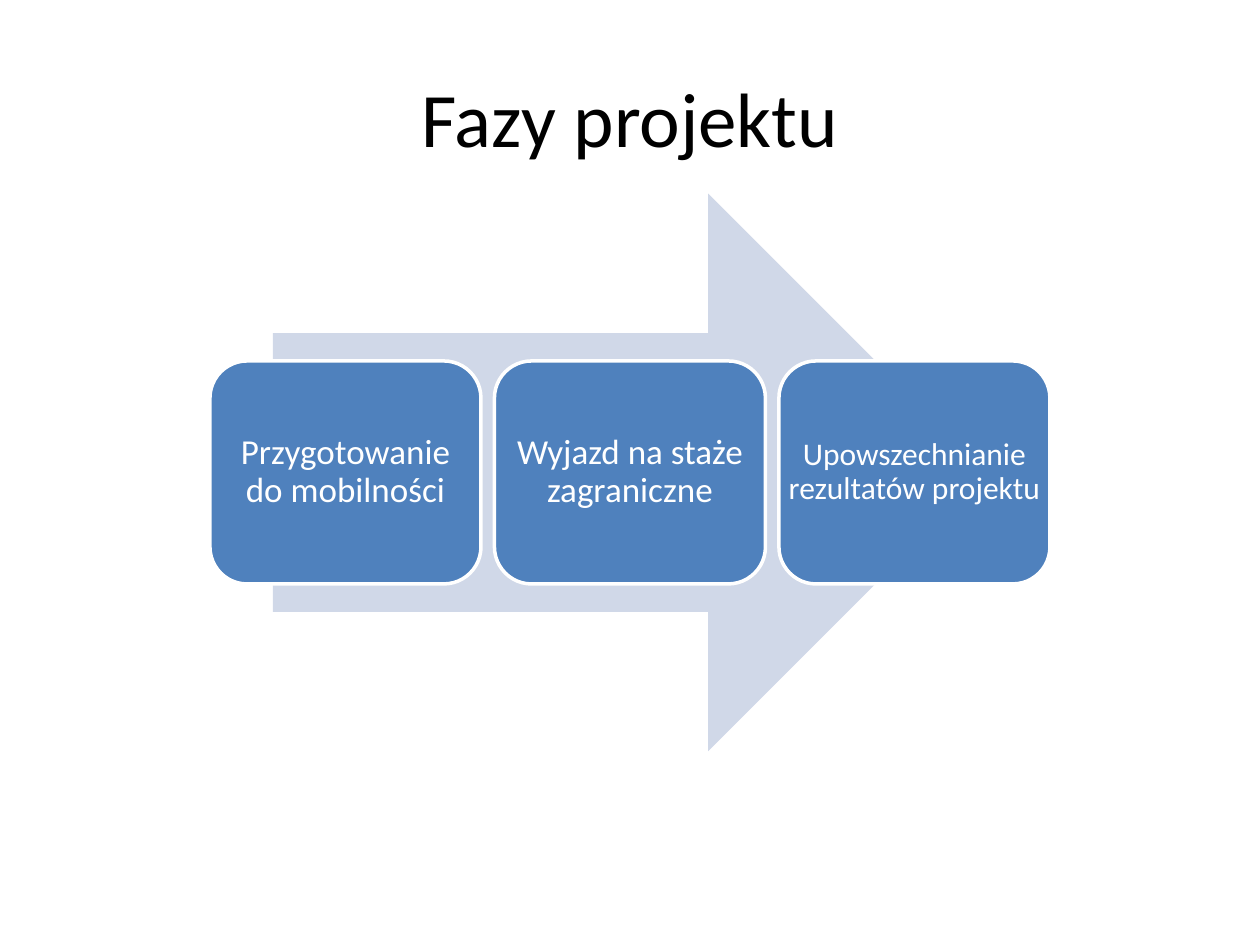
from pptx import Presentation
from pptx import util as u
from pptx.dml.color import RGBColor
from pptx.enum import shapes, text

COLORS = {"title": "000000", "arrow": "D0D8E8", "card": "4F81BD", "white": "FFFFFF"}
WIDTH, HEIGHT = u.Inches(10), u.Inches(7.5)
PHASES = [
    ("Przygotowanie do mobilności", 20, 0.08),
    ("Wyjazd na staże zagraniczne", 20, 0.08),
    ("Upowszechnianie rezultatów projektu", 18, 0.07),
]


def color(name):
    """Return the named palette colour."""
    return RGBColor.from_string(COLORS[name])


def add_label(page, box, words, size, shade, inset=0.1, spacing=1.0):
    """Place centred, wrapping text in a box."""
    frame = page.shapes.add_textbox(*box).text_frame
    frame.word_wrap = True
    frame.vertical_anchor = text.MSO_ANCHOR.MIDDLE
    frame.margin_left = frame.margin_right = u.Inches(inset)
    frame.margin_top = frame.margin_bottom = u.Inches(inset)
    frame.text = words
    para = frame.paragraphs[0]
    para.alignment = text.PP_ALIGN.CENTER
    para.line_spacing = spacing
    font = para.runs[0].font
    font.name, font.size = "Calibri", u.Pt(size)
    font.color.rgb = color(shade)


def add_block(page, kind, box, fill):
    """Place a filled preset shape without outline or shadow."""
    block = page.shapes.add_shape(kind, *box)
    block.shadow.inherit = False
    block.fill.solid()
    block.fill.fore_color.rgb = color(fill)
    block.line.fill.background()
    return block


def add_process(page, box):
    """Place the arrow and a row of phase cards inside a box."""
    left, top, width, height = box
    arrow_width = int(width * 0.85)
    arrow_box = (left + (width - arrow_width) // 2, top, arrow_width, height)
    add_block(page, shapes.MSO_SHAPE.RIGHT_ARROW, arrow_box, "arrow")

    gap = int(width * 0.016)
    card_width = (width - gap * (len(PHASES) - 1)) // len(PHASES)
    card_height = int(height * 0.4)
    card_top = top + (height - card_height) // 2
    for column, (words, size, inset) in enumerate(PHASES):
        card_box = (left + column * (card_width + gap), card_top, card_width, card_height)
        card = add_block(page, shapes.MSO_SHAPE.ROUNDED_RECTANGLE, card_box, "card")
        card.line.color.rgb = color("white")
        card.line.width = u.Pt(2)
        add_label(page, card_box, words, size, "white", inset, 0.9)


def main():
    """Build and save the project phases slide."""
    deck = Presentation()
    deck.slide_width, deck.slide_height = WIDTH, HEIGHT
    page = deck.slides.add_slide(deck.slide_layouts[6])
    title_box = (int(WIDTH * 0.05), int(HEIGHT * 0.04), int(WIDTH * 0.9), HEIGHT // 6)
    add_label(page, title_box, "Fazy projektu", 44, "title")
    process_width, process_height = WIDTH * 2 // 3, int(HEIGHT * 0.59)
    process_box = ((WIDTH - process_width) // 2, (HEIGHT - process_height) // 2,
                   process_width, process_height)
    add_process(page, process_box)
    deck.save("out.pptx")


if __name__ == "__main__":
    main()
